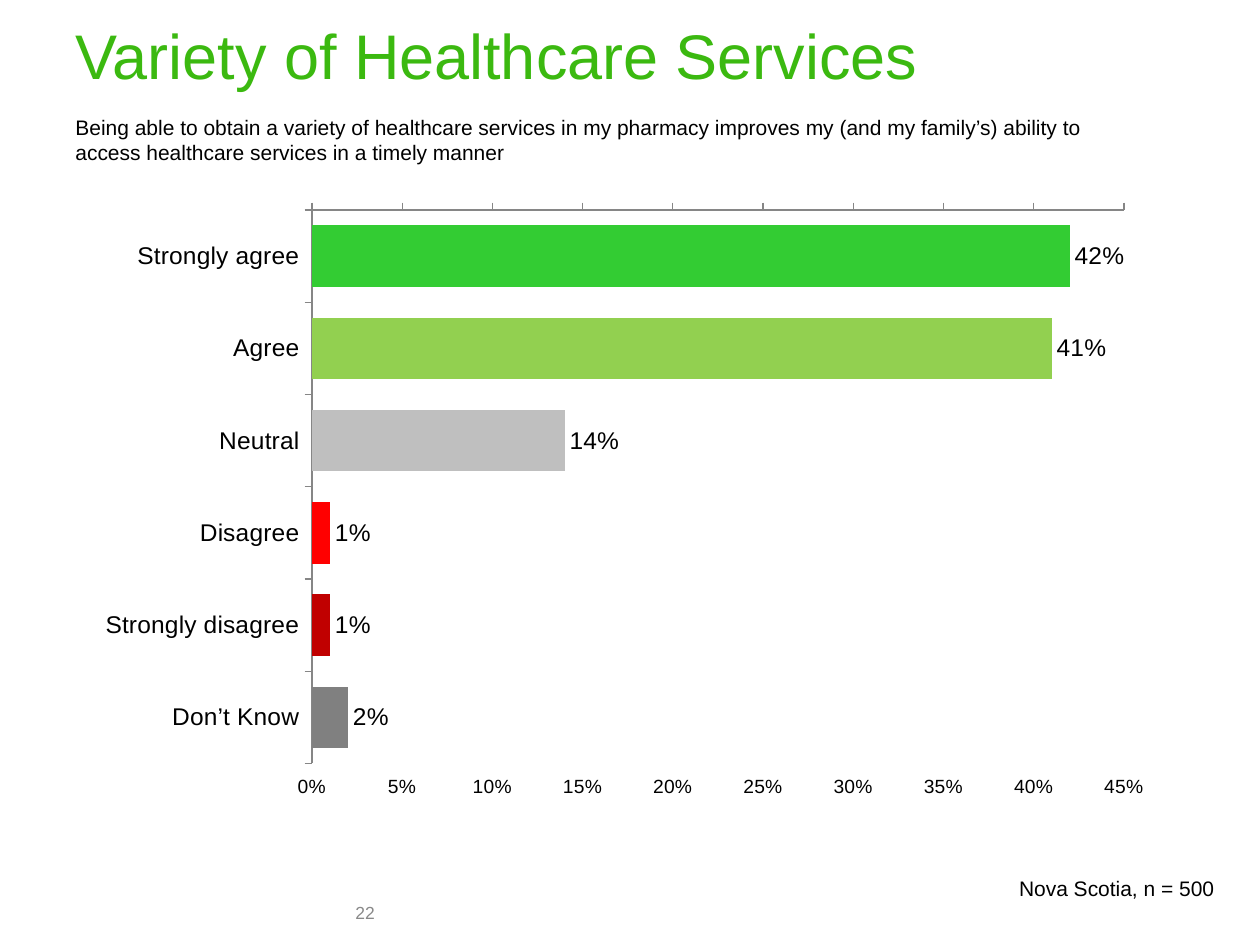
from dataclasses import dataclass

from lxml import etree
from pptx import Presentation
from pptx.chart.data import CategoryChartData
from pptx.dml.color import RGBColor
from pptx.enum.chart import XL_CHART_TYPE, XL_LABEL_POSITION, XL_TICK_LABEL_POSITION, XL_TICK_MARK
from pptx.enum.text import MSO_ANCHOR, PP_ALIGN
from pptx.oxml.ns import qn
from pptx.util import Emu, Pt

BAR = XL_CHART_TYPE.BAR_CLUSTERED
OUTER = XL_LABEL_POSITION.OUTSIDE_END
HIGH = XL_TICK_LABEL_POSITION.HIGH
OUT = XL_TICK_MARK.OUTSIDE
TOP, MID = MSO_ANCHOR.TOP, MSO_ANCHOR.MIDDLE
LEFT, RIGHT = PP_ALIGN.LEFT, PP_ALIGN.RIGHT
SCALE = 914400 / 126


@dataclass(frozen=True)
class Theme:
    """Colours and type sizes of the slide."""
    font: str = "Arial"
    ink: str = "000000"
    green: str = "3BB910"
    grey: str = "898989"
    axis: str = "868686"
    base: str = "4F81BD"
    title: int = 36
    label: int = 14
    body: int = 12
    tick: int = 11
    page: int = 10


THEME = Theme()
ANSWERS = [
    ("Strongly agree", 0.42, "33CC33"),
    ("Agree", 0.41, "92D050"),
    ("Neutral", 0.14, "BFBFBF"),
    ("Disagree", 0.01, "FF0000"),
    ("Strongly disagree", 0.01, "C00000"),
    ("Don’t Know", 0.02, "808080"),
]
CHART = (71, 202, 1118, 609)
PLOT = (241, 0, 812, 561)


def px(count):
    """Turn pixels into EMU."""
    return Emu(round(count * SCALE))


def style(font, size, color=THEME.ink):
    """Set the face, size and colour of a font."""
    font.name = THEME.font
    font.size = Pt(size)
    font.color.rgb = RGBColor.from_string(color)


def paint(fill, color):
    """Fill with one solid colour."""
    fill.solid()
    fill.fore_color.rgb = RGBColor.from_string(color)


def add_text(slide, box, text, size, color=THEME.ink, align=LEFT, anchor=TOP):
    """Add a wrapped text box with one paragraph."""
    frame = slide.shapes.add_textbox(*map(px, box)).text_frame
    frame.word_wrap = True
    frame.vertical_anchor = anchor
    line = frame.paragraphs[0]
    line.text = text
    line.alignment = align
    style(line.font, size, color)


def set_axis(axis, size):
    """Style an axis with outer ticks and no grid."""
    axis.has_major_gridlines = False
    axis.major_tick_mark = OUT
    axis.format.line.color.rgb = RGBColor.from_string(THEME.axis)
    axis.format.line.width = Pt(0.75)
    style(axis.tick_labels.font, size)


def set_plot(chart):
    """Fix the inner plot area as shares of the chart."""
    area = chart.plots[0]._element.getparent()
    for old in area.findall(qn("c:layout")):
        area.remove(old)
    layout = etree.Element(qn("c:layout"))
    area.insert(0, layout)
    manual = etree.SubElement(layout, qn("c:manualLayout"))
    parts = {"layoutTarget": "inner", "xMode": "edge", "yMode": "edge"}
    for name, part, whole in zip("xywh", PLOT, CHART[2:] * 2):
        parts[name] = part / whole
    for name, value in parts.items():
        etree.SubElement(manual, qn(f"c:{name}")).set("val", str(value))


def add_bars(slide):
    """Add the bar chart of answers."""
    names, shares, colors = zip(*ANSWERS)
    data = CategoryChartData(number_format="0%")
    data.categories = names
    data.add_series("Series 1", shares)
    chart = slide.shapes.add_chart(BAR, *map(px, CHART), data).chart
    chart.has_legend = False
    chart.has_title = False
    style(chart.font, THEME.tick)
    set_plot(chart)

    set_axis(chart.category_axis, THEME.label)
    chart.category_axis.reverse_order = True
    chart.category_axis.crosses_at = len(ANSWERS) + 1
    scale = chart.value_axis
    set_axis(scale, THEME.tick)
    scale.minimum_scale, scale.maximum_scale, scale.major_unit = 0, 0.45, 0.05
    scale.tick_label_position = HIGH
    scale.tick_labels.number_format = "0%"
    scale.tick_labels.number_format_is_linked = False

    plot = chart.plots[0]
    plot.gap_width = 50
    plot.vary_by_categories = False
    series = plot.series[0]
    paint(series.format.fill, THEME.base)
    for index, color in enumerate(colors):
        paint(series.points[index].format.fill, color)
    labels = series.data_labels
    labels.show_value = True
    labels.position = OUTER
    labels.number_format = "0%"
    labels.number_format_is_linked = False
    style(labels.font, THEME.label)


def main():
    """Build and save the slide."""
    deck = Presentation()
    deck.slide_width, deck.slide_height = px(1260), px(945)
    slide = deck.slides.add_slide(deck.slide_layouts[6])
    add_text(slide, (343, 899, 294, 28), "22", THEME.page, THEME.grey, anchor=MID)
    add_text(slide, (560, 869, 667, 38), "Nova Scotia, n = 500", THEME.body, align=RIGHT)
    add_text(slide, (63, 1, 1237, 107), "Variety of Healthcare Services",
             THEME.title, THEME.green, anchor=MID)
    add_text(slide, (63, 108, 1101, 63),
             "Being able to obtain a variety of healthcare services in my pharmacy "
             "improves my (and my family’s) ability to access healthcare services "
             "in a timely manner", THEME.body)
    add_bars(slide)
    deck.save("out.pptx")


if __name__ == "__main__":
    main()
